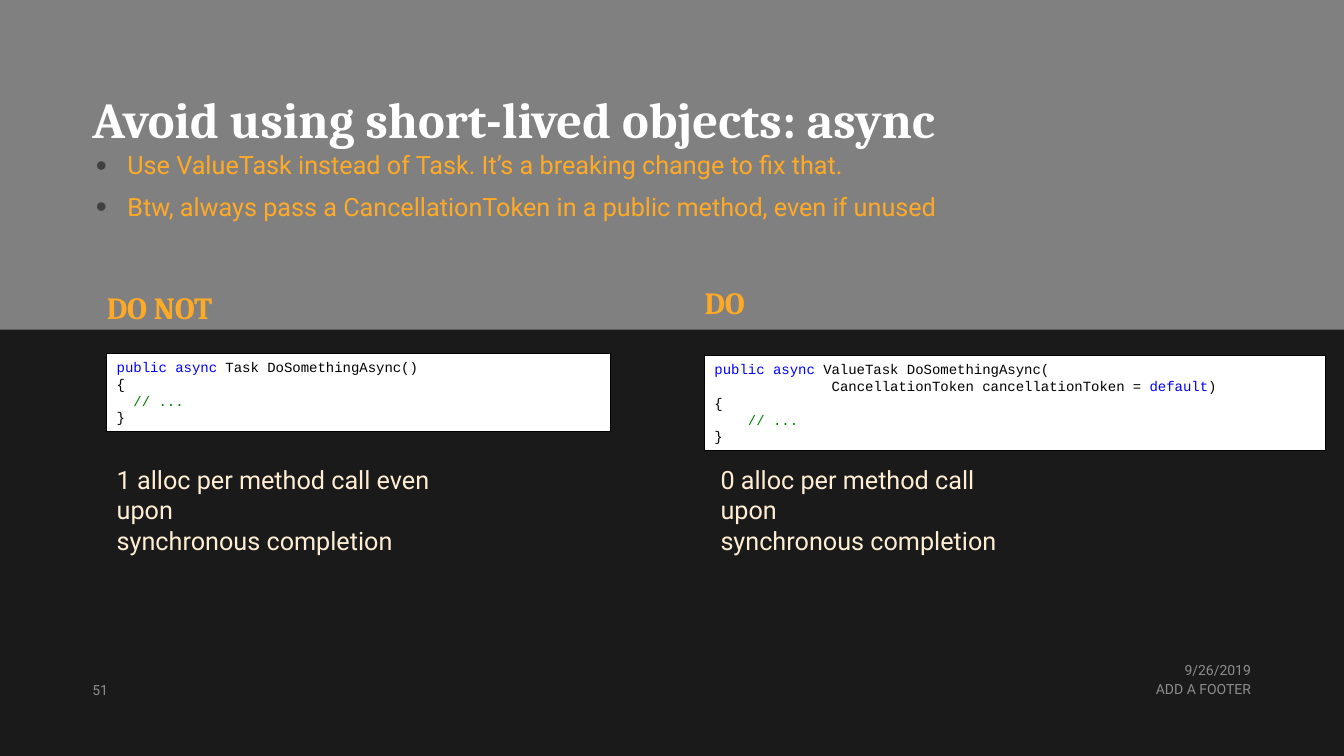
from lxml.etree import SubElement
from pptx import Presentation
from pptx.dml.color import RGBColor
from pptx.enum.shapes import MSO_SHAPE
from pptx.enum.text import MSO_ANCHOR, MSO_AUTO_SIZE, PP_ALIGN
from pptx.oxml.ns import qn
from pptx.util import Pt


def rgb(value):
    return RGBColor.from_string(value)


def write(sp, lines, box=None, size=18, font="Roboto", color="FFFFFF", bold=False,
          align=PP_ALIGN.LEFT, anchor=MSO_ANCHOR.TOP, inset=(0, 0, 0, 0),
          spacing=1.0, before=0, bullet=False):
    if box:
        sp.left, sp.top, sp.width, sp.height = [Pt(v) for v in box]
    tf = sp.text_frame
    tf.auto_size = MSO_AUTO_SIZE.NONE
    tf.word_wrap = True
    tf.vertical_anchor = anchor
    tf.margin_left, tf.margin_top, tf.margin_right, tf.margin_bottom = [Pt(v) for v in inset]
    for i, line in enumerate(lines):
        p = tf.add_paragraph() if i else tf.paragraphs[0]
        if bullet:
            pPr = p._p.get_or_add_pPr()
            pPr.set("marL", str(Pt(22.5)))
            pPr.set("indent", str(-Pt(22.5)))
            SubElement(SubElement(pPr, qn("a:buClr")), qn("a:srgbClr"), val="404040")
            SubElement(pPr, qn("a:buSzPct"), val="125000")
            SubElement(pPr, qn("a:buFont"), typeface="Arial")
            SubElement(pPr, qn("a:buChar"), char="•")
        p.alignment = align
        p.line_spacing = spacing
        p.space_before = Pt(before if i else 0)
        for text, run_color in [(line, color)] if isinstance(line, str) else line:
            r = p.add_run()
            r.text = text
            r.font.size = Pt(size)
            r.font.name = font
            r.font.bold = bold
            r.font.color.rgb = rgb(run_color)


prs = Presentation()
prs.slide_width, prs.slide_height = Pt(960), Pt(540)
s = prs.slides.add_slide(prs.slide_layouts.get_by_name("Comparison"))
s.background.fill.solid()
s.background.fill.fore_color.rgb = rgb("808080")
title, left_head, bullets, right_head, spare = s.placeholders
spare.element.getparent().remove(spare.element)

panel = s.shapes.add_shape(MSO_SHAPE.RECTANGLE, Pt(0), Pt(235.5), Pt(960), Pt(304.5))
panel.shadow.inherit = False
panel.fill.solid()
panel.fill.fore_color.rgb = rgb("1A1A1A")
panel.line.fill.background()

write(title, ["Avoid using short-lived objects: async"], (66, 63.4, 699, 43.2), size=36,
      font="Cambria", bold=True, anchor=MSO_ANCHOR.BOTTOM, spacing=0.9)
write(bullets, ["Use ValueTask instead of Task. It’s a breaking change to fix that.",
                "Btw, always pass a CancellationToken in a public method, even if unused"],
      (65.5, 109.4, 828, 73.4), color="FFAA27", inset=(3, 0, 0, 0),
      spacing=0.9, before=10, bullet=True)
for head, text, x, y in [(left_head, "DO NOT", 76.3, 206.6), (right_head, "DO", 503.3, 203)]:
    write(head, [text], (x, y, 288.7, 26.6), size=22, font="Cambria", color="FFAA27",
          bold=True, anchor=MSO_ANCHOR.BOTTOM, spacing=0.9)

BLACK, BLUE, GREEN = "000000", "0000FF", "008000"
task_code = [
    [("public async", BLUE), (" Task DoSomethingAsync()", BLACK)],
    "{",
    [("  ", BLACK), ("// ...", GREEN)],
    "}",
]
value_task_code = [
    [("public async ", BLUE), ("ValueTask DoSomethingAsync(", BLACK)],
    [("              CancellationToken cancellationToken = ", BLACK), ("default", BLUE), (")", BLACK)],
    "{",
    [("    ", BLACK), ("// ...", GREEN)],
    "}",
]
for code, box in [(task_code, (76.3, 252.5, 360, 55.7)),
                  (value_task_code, (503.3, 254, 443.5, 67.7))]:
    sp = s.shapes.add_shape(MSO_SHAPE.RECTANGLE, *[Pt(v) for v in box])
    sp.shadow.inherit = False
    sp.fill.solid()
    sp.fill.fore_color.rgb = rgb("FFFFFF")
    sp.line.color.rgb = rgb(BLACK)
    sp.line.width = Pt(1)
    write(sp, code, size=10, font="Courier New", color=BLACK, inset=(7.2, 3.6, 7.2, 3.6))

RIGHT = PP_ALIGN.RIGHT
labels = [
    (["1 alloc per method call even upon", "synchronous completion"], (76.3, 328.3, 252, 72),
     {"color": "FFEED4", "inset": (7.2, 3.6, 7.2, 3.6)}),
    (["0 alloc per method call upon", "synchronous completion"], (507.6, 328.3, 216, 72),
     {"color": "FFEED4", "inset": (7.2, 3.6, 7.2, 3.6)}),
    (["9/26/2019"], (677.5, 472.3, 216, 11.5), {"size": 10, "color": "8D8D8D", "align": RIGHT}),
    (["ADD A FOOTER"], (569.5, 486, 324, 15), {"size": 10, "color": "8D8D8D", "align": RIGHT}),
    (["51"], (66, 484.6, 36, 14.4), {"size": 10, "color": "8D8D8D", "anchor": MSO_ANCHOR.BOTTOM}),
]
for lines, box, style in labels:
    write(s.shapes.add_textbox(*[Pt(v) for v in box]), lines, **style)

prs.save("out.pptx")
